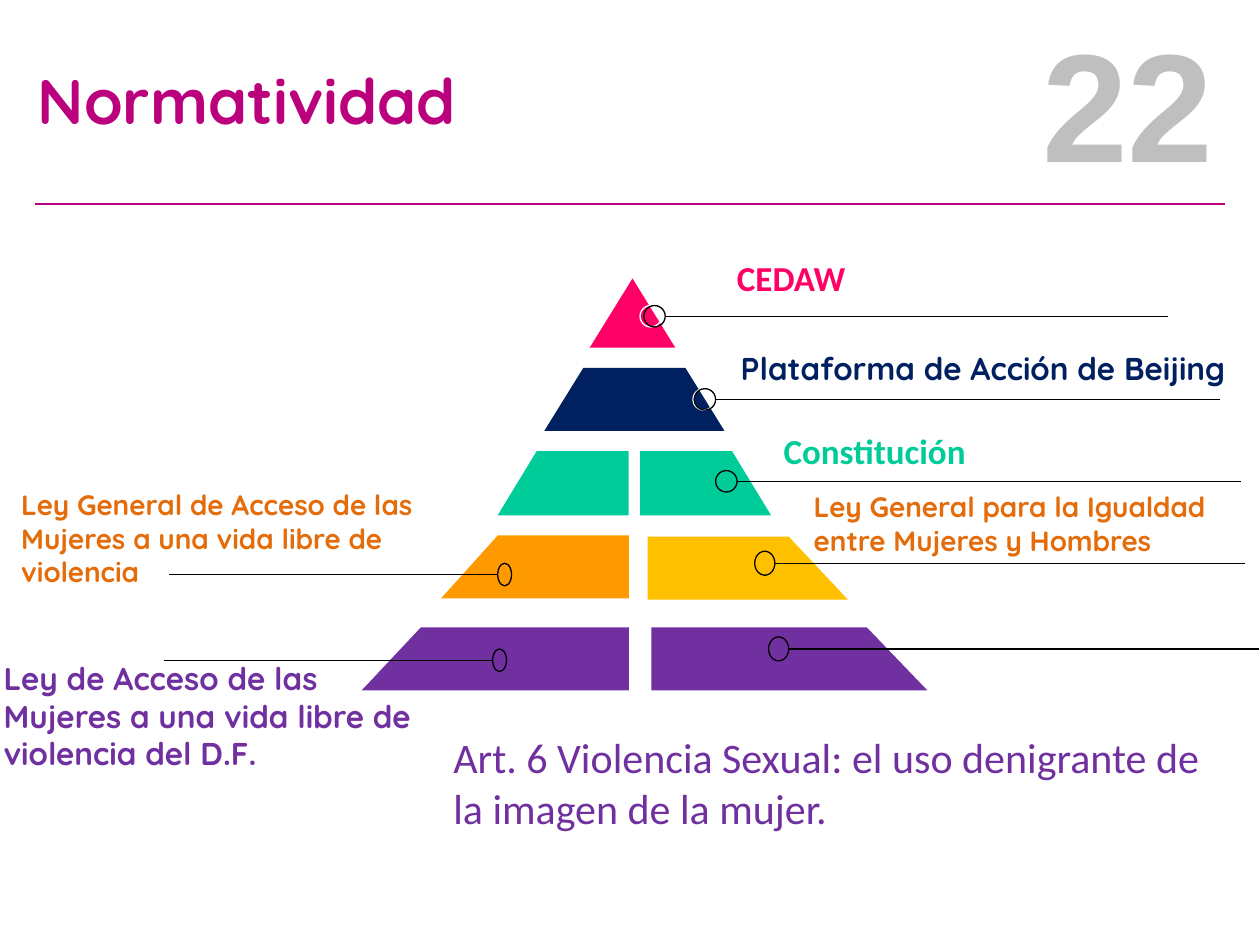
import pptx
import pptx.util
import pptx.dml.color
import pptx.enum.shapes
import pptx.enum.text
import pptx.oxml.ns
import lxml.etree

Inches = pptx.util.Inches
ALIGN = pptx.enum.text.PP_ALIGN
ANCHOR = pptx.enum.text.MSO_ANCHOR
SHAPE = pptx.enum.shapes.MSO_SHAPE

W, H = 10, 7.5
COLORS = {
    "magenta": "BA007C", "gray": "BFBFBF", "pink": "FF0066", "navy": "002060",
    "green": "00CC99", "yellow": "FFC000", "orange": "FF9900", "rust": "E46C0A",
    "purple": "7030A0", "black": "000000", "white": "FFFFFF",
}

TITLE = "Normatividad"
# text, (left, top, width, height), size, font, color, bold, wraps
LABELS = [
    ("CEDAW", (5.75, 1.99, 2.28, 0.71), 20, "Calibri", "pink", True, True),
    ("Plataforma de Acción de Beijing", (5.78, 2.72, 4.16, 0.4),
     18, "Quicksand", "navy", True, False),
    ("Constitución", (6.12, 3.36, 2.28, 0.71), 20, "Calibri", "green", True, True),
    ("Ley General de Acceso de las Mujeres a una vida libre de violencia",
     (0.07, 3.82, 3.58, 0.91), 16, "Quicksand", "rust", True, True),
    ("Ley General para la Igualdad entre Mujeres y Hombres",
     (6.36, 3.84, 3.58, 0.64), 16, "Quicksand", "rust", True, True),
    ("Ley de Acceso de las Mujeres a una vida libre de violencia del D.F.",
     (-0.07, 5.18, 3.58, 1.01), 18, "Quicksand", "purple", True, True),
    ("Art. 6 Violencia Sexual: el uso denigrante de la imagen de la mujer.",
     (3.5, 5.76, 6.24, 0.91), 24, "Calibri", "purple", False, True),
]
# color, top, bottom, x of top-left, top-right, bottom-right, bottom-left
PYRAMID = [
    ("pink", 2.21, 2.76, (5.02, 5.02, 5.36, 4.68)),
    ("navy", 2.92, 3.42, (4.63, 5.44, 5.75, 4.32)),
    ("green", 3.58, 4.09, (4.26, 4.99, 4.99, 3.95)),
    ("green", 3.58, 4.09, (5.08, 5.81, 6.12, 5.08)),
    ("orange", 4.25, 4.75, (3.95, 4.99, 4.99, 3.5)),
    ("yellow", 4.26, 4.76, (5.14, 6.26, 6.73, 5.14)),
    ("purple", 4.98, 5.48, (3.34, 4.99, 4.99, 2.87)),
    ("purple", 4.98, 5.48, (5.17, 6.88, 7.36, 5.17)),
]
# ring left, center y, width, height, far end of the leader, color
CALLOUTS = [
    (5.08, 2.51, 0.17, 0.17, None, "white"),
    (5.5, 3.17, 0.17, 0.17, None, "white"),
    (5.11, 2.51, 0.17, 0.17, 9.27, "black"),
    (5.51, 3.17, 0.17, 0.17, 9.68, "black"),
    (5.68, 3.82, 0.17, 0.17, 9.85, "black"),
    (5.99, 4.47, 0.16, 0.19, 9.88, "black"),
    (3.95, 4.56, 0.11, 0.18, 1.34, "black"),
    (6.1, 5.15, 0.16, 0.19, 9.99, "black"),
    (3.91, 5.24, 0.11, 0.18, 1.3, "black"),
]


def rgb(name):
    return pptx.dml.color.RGBColor.from_string(COLORS[name])


def write(sp, text, size, font, color, bold=True, wraps=True,
          align=ALIGN.LEFT, anchor=ANCHOR.TOP):
    tf = sp.text_frame
    frame = {"word_wrap": wraps, "vertical_anchor": anchor,
             "auto_size": pptx.enum.text.MSO_AUTO_SIZE.NONE}
    for key, value in frame.items():
        setattr(tf, key, value)
    p = tf.paragraphs[0]
    p.alignment = align
    r = p.add_run()
    r.text = text
    for key, value in {"size": pptx.util.Pt(size), "name": font, "bold": bold}.items():
        setattr(r.font, key, value)
    r.font.color.rgb = rgb(color)


def add_text(slide, text, box, *args, **kwargs):
    write(slide.shapes.add_textbox(*map(Inches, box)), text, *args, **kwargs)


def add_rule(slide, x1, x2, y, color, width):
    """Draw a horizontal line without a shadow."""
    line = slide.shapes.add_connector(
        pptx.enum.shapes.MSO_CONNECTOR.STRAIGHT, *map(Inches, (x1, y, x2, y)))
    line.line.color.rgb = rgb(color)
    line.line.width = pptx.util.Pt(width)
    sp_pr = line._element.spPr
    lxml.etree.SubElement(sp_pr, pptx.oxml.ns.qn("a:effectLst"))


def add_tier(slide, color, top, bottom, xs):
    points = [(Inches(x), Inches(y)) for x, y in zip(xs, (top, top, bottom, bottom))]
    builder = slide.shapes.build_freeform(*points[0])
    builder.add_line_segments(points[1:], close=True)
    sp = builder.convert_to_shape()
    sp.shadow.inherit = False
    sp.fill.solid()
    sp.fill.fore_color.rgb = rgb(color)
    sp.line.fill.background()


def add_callout(slide, left, y, width, height, end, color):
    """Draw a ring and, if it has a far end, the leader from its near side."""
    sp = slide.shapes.add_shape(
        SHAPE.OVAL, *map(Inches, (left, y - height / 2, width, height)))
    sp.shadow.inherit = False
    sp.fill.background()
    sp.line.color.rgb = rgb(color)
    sp.line.width = pptx.util.Pt(0.75)
    if end is not None:
        start = left + width if end > left else left
        add_rule(slide, start, end, y, color, 0.75)


def main():
    prs = pptx.Presentation()
    prs.slide_width, prs.slide_height = Inches(W), Inches(H)
    slide = prs.slides.add_slide(prs.slide_layouts.get_by_name("Title Only"))

    title = slide.shapes.title
    place = {"left": 0.2, "top": 0.44, "width": 7.17, "height": 0.69}
    for key, value in place.items():
        setattr(title, key, Inches(value))
    write(title, TITLE, 36, "Quicksand", "magenta", anchor=ANCHOR.MIDDLE)
    add_text(slide, "22", (6.34, 0.29, 3.39, 1.02), 88, "Arial", "gray",
             align=ALIGN.RIGHT, anchor=ANCHOR.MIDDLE)
    add_rule(slide, 0.28, W - 0.28, 1.62, "magenta", 1)

    for tier in PYRAMID:
        add_tier(slide, *tier)
    for callout in CALLOUTS:
        add_callout(slide, *callout)
    for label in LABELS:
        add_text(slide, *label)
    prs.save("out.pptx")


if __name__ == "__main__":
    main()
